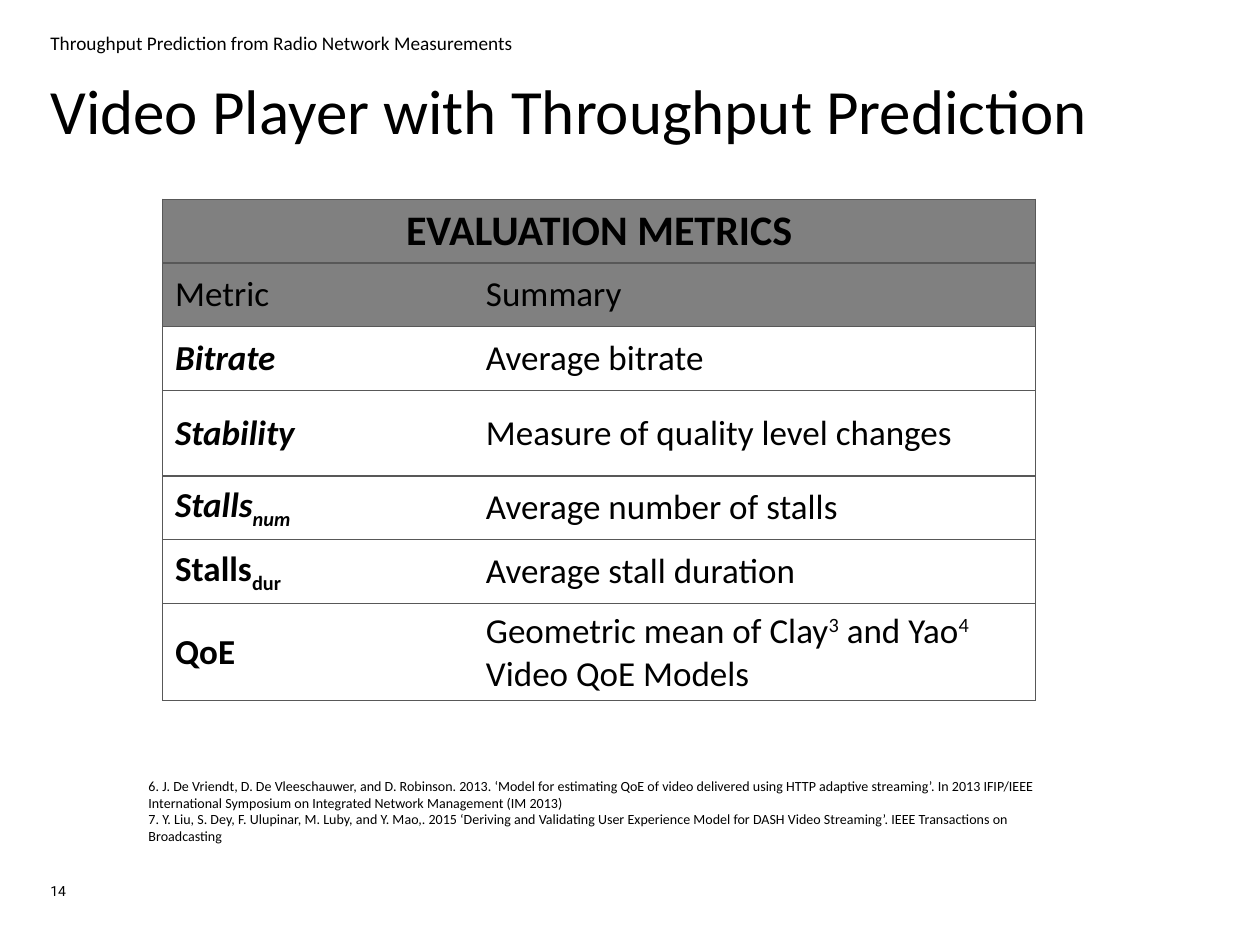
from lxml import etree
from pptx import Presentation
from pptx.dml.color import RGBColor
from pptx.enum.text import MSO_ANCHOR, PP_ALIGN
from pptx.oxml.ns import qn
from pptx.util import Inches, Pt

MIDDLE, TOP = MSO_ANCHOR.MIDDLE, MSO_ANCHOR.TOP
LEFT, CENTER = PP_ALIGN.LEFT, PP_ALIGN.CENTER
WIDE, HIGH = Inches(10), Inches(7.5)
BLACK, GREY, LINE = "000000", "808080", "585858"
SUB, SUP = -25000, 30000

BOLD = {"bold": True}
SLANT = {"bold": True, "italic": True}

# Each cell is a list of runs: (text, font values, baseline shift)
ROWS = [
    ([("Metric", {}, 0)], [("Summary", {}, 0)]),
    ([("Bitrate", SLANT, 0)], [("Average bitrate", {}, 0)]),
    ([("Stability", SLANT, 0)], [("Measure of quality level changes", {}, 0)]),
    ([("Stalls", SLANT, 0), ("num", SLANT, SUB)],
     [("Average number of stalls", {}, 0)]),
    ([("Stalls", BOLD, 0), ("dur", BOLD, SUB)],
     [("Average stall duration", {}, 0)]),
    ([("QoE", BOLD, 0)],
     [("Geometric mean of Clay", {}, 0), ("3", {}, SUP), (" and Yao", {}, 0),
      ("4", {}, SUP), (" Video QoE Models", {}, 0)]),
]
WEIGHTS = [3, 3, 3, 4, 3, 3, 4]
SPLIT = 0.356

NOTES = [
    "6. J. De Vriendt, D. De Vleeschauwer, and D. Robinson. 2013. ‘Model for "
    "estimating QoE of video delivered using HTTP adaptive streaming’. In 2013 "
    "IFIP/IEEE International Symposium on Integrated Network Management (IM 2013)",
    "7. Y. Liu, S. Dey, F. Ulupinar, M. Luby, and Y. Mao,. 2015 ‘Deriving and "
    "Validating User Experience Model for DASH Video Streaming’. IEEE "
    "Transactions on Broadcasting",
]


def color(code):
    return RGBColor.from_string(code)


def place(box):
    """Turn percent of the slide into lengths."""
    x, y, w, h = box
    return [round(part * side / 100)
            for part, side in ((x, WIDE), (y, HIGH), (w, WIDE), (h, HIGH))]


def assign(item, values):
    for name, value in values.items():
        setattr(item, name, value)


def add_run(para, text, size, values=None, shift=0, face="Calibri"):
    run = para.add_run()
    run.text = text
    look = {"name": face, "size": Pt(size), "bold": False, "italic": False}
    assign(run.font, {**look, **(values or {})})
    run.font.color.rgb = color(BLACK)
    if shift:
        run._r.get_or_add_rPr().set("baseline", str(shift))


def add_text(slide, box, lines, size, inset=0, face="Calibri", **para_look):
    frame = slide.shapes.add_textbox(*place(box)).text_frame
    side, edge = Inches(0.1 * inset), Inches(0.05 * inset)
    assign(frame, {"word_wrap": True, "vertical_anchor": TOP,
                   "margin_left": side, "margin_right": side,
                   "margin_top": edge, "margin_bottom": edge})
    for n, line in enumerate(lines):
        para = frame.add_paragraph() if n else frame.paragraphs[0]
        add_run(para, line, size, face=face)
    assign(para, para_look)


def add_edges(cell, shown):
    """Draw the sides named in shown, and clear the others."""
    props = cell._tc.get_or_add_tcPr()
    for n, side in enumerate("LRTB"):
        edge = etree.Element(qn("a:ln" + side), w=str(Pt(0.75)))
        if side in shown:
            fill = etree.SubElement(edge, qn("a:solidFill"))
            etree.SubElement(fill, qn("a:srgbClr"), val=LINE)
        else:
            etree.SubElement(edge, qn("a:noFill"))
        props.insert(n, edge)


def fill_cell(cell, runs, size, shade, align=LEFT):
    cell.vertical_anchor = MIDDLE
    para = cell.text_frame.paragraphs[0]
    para.alignment = align
    for text, values, shift in runs:
        add_run(para, text, size, values, shift)
    if shade:
        cell.fill.solid()
        cell.fill.fore_color.rgb = color(shade)
    else:
        cell.fill.background()


def add_metrics(slide, box):
    x, y, w, h = place(box)
    table = slide.shapes.add_table(len(WEIGHTS), 2, x, y, w, h).table
    assign(table, {"first_row": False, "horz_banding": False})
    for col, share in zip(table.columns, (SPLIT, 1 - SPLIT)):
        col.width = round(w * share)
    for row, weight in zip(table.rows, WEIGHTS):
        row.height = round(h * weight / sum(WEIGHTS))
    # Heading across both columns
    head = table.cell(0, 0)
    head.merge(table.cell(0, 1))
    fill_cell(head, [("EVALUATION METRICS", BOLD, 0)], 24, GREY, CENTER)
    add_edges(head, "LRTB")
    add_edges(table.cell(0, 1), "RTB")
    # Column names, then one row for each metric
    for r, row in enumerate(ROWS, 1):
        for c, runs in enumerate(row):
            cell = table.cell(r, c)
            fill_cell(cell, runs, 20, GREY if r == 1 else None)
            add_edges(cell, "LR"[c] + "TB")


def add_frame(slide, box):
    """Running head, title and page number, down the given box."""
    x, y, w, h = box
    add_text(slide, (x, y, w, 2.67),
             ["Throughput Prediction from Radio Network Measurements"], 11)
    add_text(slide, (x, y + 3.47, w, 7.2),
             ["Video Player with Throughput Prediction"], 36,
             line_spacing=1.1, space_after=Pt(10))
    add_text(slide, (x, y + h - 3.33, 2.4, 3.33), ["14"], 8, face="Roboto",
             line_spacing=Pt(10))


def main():
    deck = Presentation()
    assign(deck, {"slide_width": WIDE, "slide_height": HIGH})
    slide = deck.slides.add_slide(deck.slide_layouts[6])
    add_frame(slide, (4, 3.33, 92, 93.33))
    add_metrics(slide, (12.9, 21.07, 69.3, 51.87))
    # References
    add_text(slide, (10.8, 81.6, 75.8, 11.87), NOTES, 8, inset=1,
             space_after=Pt(8))
    deck.save("out.pptx")


if __name__ == "__main__":
    main()
